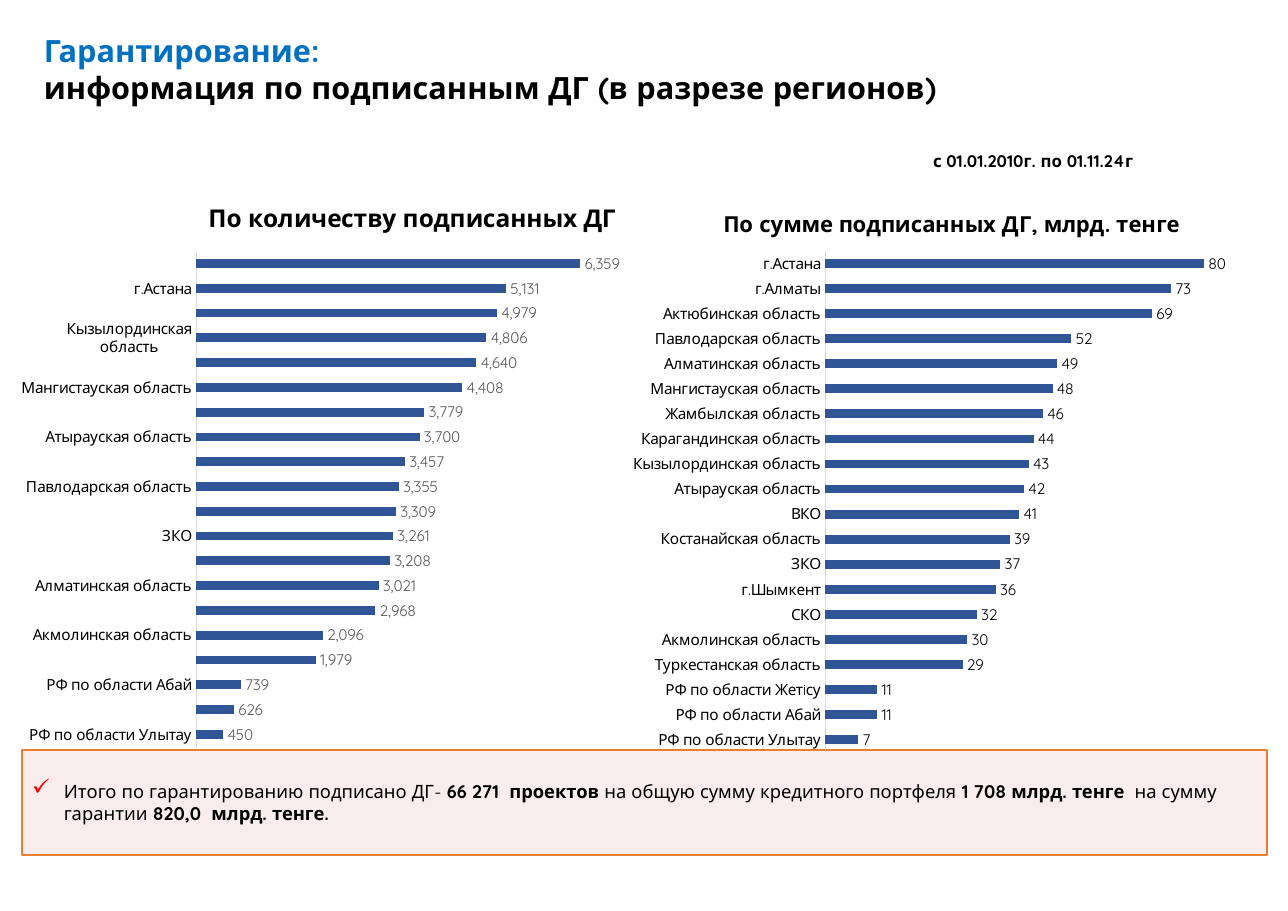
import pptx
import pptx.chart.data
import pptx.dml.color
import pptx.enum.chart
import pptx.enum.shapes
import pptx.enum.text
import pptx.oxml
import pptx.oxml.ns
import pptx.util
from pptx.util import Inches

COLORS = {
    "black": "000000", "heading": "0070C0", "bar": "2F5597", "axis": "D9D9D9",
    "grey": "595959", "box": "F2DCDB", "border": "ED7D31", "check": "FF0000",
}

COUNTS = {
    "РФ по области Улытау": 450, "РФ по области Жетiсу": 626,
    "РФ по области Абай": 739, "СКО": 1979, "Акмолинская область": 2096,
    "Костанайская область": 2968, "Алматинская область": 3021,
    "Туркестанская область": 3208, "ЗКО": 3261, "ВКО": 3309,
    "Павлодарская область": 3355, "Карагандинская область": 3457,
    "Атырауская область": 3700, "г.Шымкент": 3779,
    "Мангистауская область": 4408, "г.Алматы": 4640,
    "Кызылординская область": 4806, "Жамбылская область": 4979,
    "г.Астана": 5131, "Актюбинская область": 6359,
}
SUMS = {
    "РФ по области Улытау": 7, "РФ по области Абай": 11,
    "РФ по области Жетiсу": 11, "Туркестанская область": 29,
    "Акмолинская область": 30, "СКО": 32, "г.Шымкент": 36, "ЗКО": 37,
    "Костанайская область": 39, "ВКО": 41, "Атырауская область": 42,
    "Кызылординская область": 43, "Карагандинская область": 44,
    "Жамбылская область": 46, "Мангистауская область": 48,
    "Алматинская область": 49, "Павлодарская область": 52,
    "Актюбинская область": 69, "г.Алматы": 73, "г.Астана": 80,
}
TOTALS = [
    ("Итого по гарантированию подписано ДГ- ", False),
    ("66 271  проектов ", True),
    ("на общую сумму кредитного портфеля ", False),
    ("1 708 млрд. тенге  ", True),
    ("на сумму гарантии", False),
    (" 820,0  млрд. тенге.", True),
]


def rgb(name):
    return pptx.dml.color.RGBColor.from_string(COLORS[name])


def element(xml, prefix):
    head, tail = xml.split(">", 1) if not xml.endswith("/>") else (xml[:-2], None)
    ns = pptx.oxml.ns.nsdecls(prefix)
    return pptx.oxml.parse_xml(f"{head} {ns}/>" if tail is None else f"{head} {ns}>{tail}")


def layout(chart_box, place, inner=False):
    """Manual chart layout for a place given in slide inches."""
    left, top, width, height = chart_box
    parts = {"x": (place[0] - left) / width, "y": (place[1] - top) / height}
    if inner:
        parts.update(w=place[2] / width, h=place[3] / height)
    target = '<c:layoutTarget val="inner"/>' if inner else ""
    modes = '<c:xMode val="edge"/><c:yMode val="edge"/>'
    sizes = "".join(f'<c:{key} val="{value:.4f}"/>' for key, value in parts.items())
    return element(
        f"<c:layout><c:manualLayout>{target}{modes}{sizes}</c:manualLayout></c:layout>", "c")


class Deck:
    font = "Quicksand"

    def __init__(self, slide):
        self.slide = slide

    def style(self, font, size, color="black", bold=False):
        font.name = self.font
        font.size = pptx.util.Pt(size)
        font.bold = bold
        font.color.rgb = rgb(color)

    def text(self, box, text, size, colors, wrap=True):
        s = self.slide.shapes.add_textbox(*map(Inches, box))
        tf = s.text_frame
        tf.word_wrap = wrap
        tf.text = text
        for r, color in zip(tf.paragraphs[0].runs, colors):
            self.style(r.font, size, color, True)

    def totals_box(self, box, parts):
        s = self.slide.shapes.add_shape(
            pptx.enum.shapes.MSO_SHAPE.RECTANGLE, *map(Inches, box))
        s.shadow.inherit = False
        s.fill.solid()
        s.fill.fore_color.rgb = rgb("box")
        s.fill._xPr.find(".//" + pptx.oxml.ns.qn("a:srgbClr")).append(
            element('<a:alpha val="50000"/>', "a"))
        s.line.color.rgb = rgb("border")
        s.line.width = pptx.util.Pt(1)
        tf = s.text_frame
        tf.word_wrap = True
        tf.vertical_anchor = pptx.enum.text.MSO_ANCHOR.MIDDLE
        tf.margin_left = tf.margin_right = Inches(0.08)
        tf.margin_top = tf.margin_bottom = Inches(0.04)
        p = tf.paragraphs[0]
        pPr = p._p.get_or_add_pPr()
        pPr.set("marL", str(Inches(0.3)))
        pPr.set("indent", str(Inches(-0.29)))
        for xml in (f'<a:buClr><a:srgbClr val="{COLORS["check"]}"/></a:buClr>',
                    '<a:buSzPct val="125000"/>', '<a:buChar char="✓"/>'):
            pPr.append(element(xml, "a"))
        p.alignment = pptx.enum.text.PP_ALIGN.LEFT
        p.space_after = pptx.util.Pt(6)
        for text, bold in parts:
            r = p.add_run()
            r.text = text
            self.style(r.font, 12, bold=bold)

    def bar_chart(self, box, title, title_size, title_at, plot, values, top_value, label_color):
        data = pptx.chart.data.CategoryChartData(number_format="#,##0")
        data.categories = list(values)
        data.add_series("Series 1", list(values.values()))
        chart = self.slide.shapes.add_chart(
            pptx.enum.chart.XL_CHART_TYPE.BAR_CLUSTERED, *map(Inches, box), data).chart
        self.style(chart.font, 10)
        chart.has_legend = False

        chart.has_title = True
        tf = chart.chart_title.text_frame
        tf.text = title
        self.style(tf.paragraphs[0].runs[0].font, title_size, bold=True)
        title_xml = chart.chart_title._element
        for old in title_xml.findall(pptx.oxml.ns.qn("c:layout")):
            title_xml.remove(old)
        title_xml.find(pptx.oxml.ns.qn("c:tx")).addnext(layout(box, title_at))
        chart.chart_title.include_in_layout = False

        plot_xml = chart._chartSpace.chart.plotArea
        for old in plot_xml.findall(pptx.oxml.ns.qn("c:layout")):
            plot_xml.remove(old)
        plot_xml.insert(0, layout(box, plot, inner=True))

        regions = chart.category_axis
        regions.major_tick_mark = pptx.enum.chart.XL_TICK_MARK.NONE
        regions.format.line.color.rgb = rgb("axis")
        regions.format.line.width = pptx.util.Pt(0.75)
        self.style(regions.tick_labels.font, 10)
        scale = chart.value_axis
        scale.minimum_scale, scale.maximum_scale = 0, top_value
        scale.has_major_gridlines = False
        scale.visible = False

        bars = chart.plots[0]
        bars.gap_width = 182
        bars.vary_by_categories = False
        fill = bars.series[0].format.fill
        fill.solid()
        fill.fore_color.rgb = rgb("bar")
        bars.has_data_labels = True
        labels = bars.data_labels
        labels.show_value = True
        labels.number_format = "#,##0"
        labels.number_format_is_linked = False
        labels.position = pptx.enum.chart.XL_LABEL_POSITION.OUTSIDE_END
        self.style(labels.font, 10, label_color)


def main():
    prs = pptx.Presentation()
    prs.slide_width, prs.slide_height = Inches(11.69), Inches(8.27)
    deck = Deck(prs.slides.add_slide(prs.slide_layouts[6]))
    deck.text((0.3, 0.24, 8.39, 0.77),
              "Гарантирование:\vинформация по подписанным ДГ (в разрезе регионов)",
              20, ["heading", "black"])
    deck.text((8.37, 1.32, 2.17, 0.29), "с 01.01.2010г. по 01.11.24г", 11, ["black"], wrap=False)
    deck.totals_box((0.2, 6.81, 11.3, 0.95), TOTALS)
    deck.bar_chart((0.08, 1.61, 5.65, 5.28), "По количеству подписанных ДГ", 16,
                   (1.85, 1.78), (1.78, 2.28, 3.84, 4.5), COUNTS, 7000, "grey")
    deck.bar_chart((5.71, 1.66, 5.79, 5.28), "По сумме подписанных ДГ, млрд. тенге", 14.4,
                   (6.53, 1.85), (7.49, 2.28, 3.87, 4.55), SUMS, 90, "black")
    prs.save("out.pptx")


if __name__ == "__main__":
    main()
